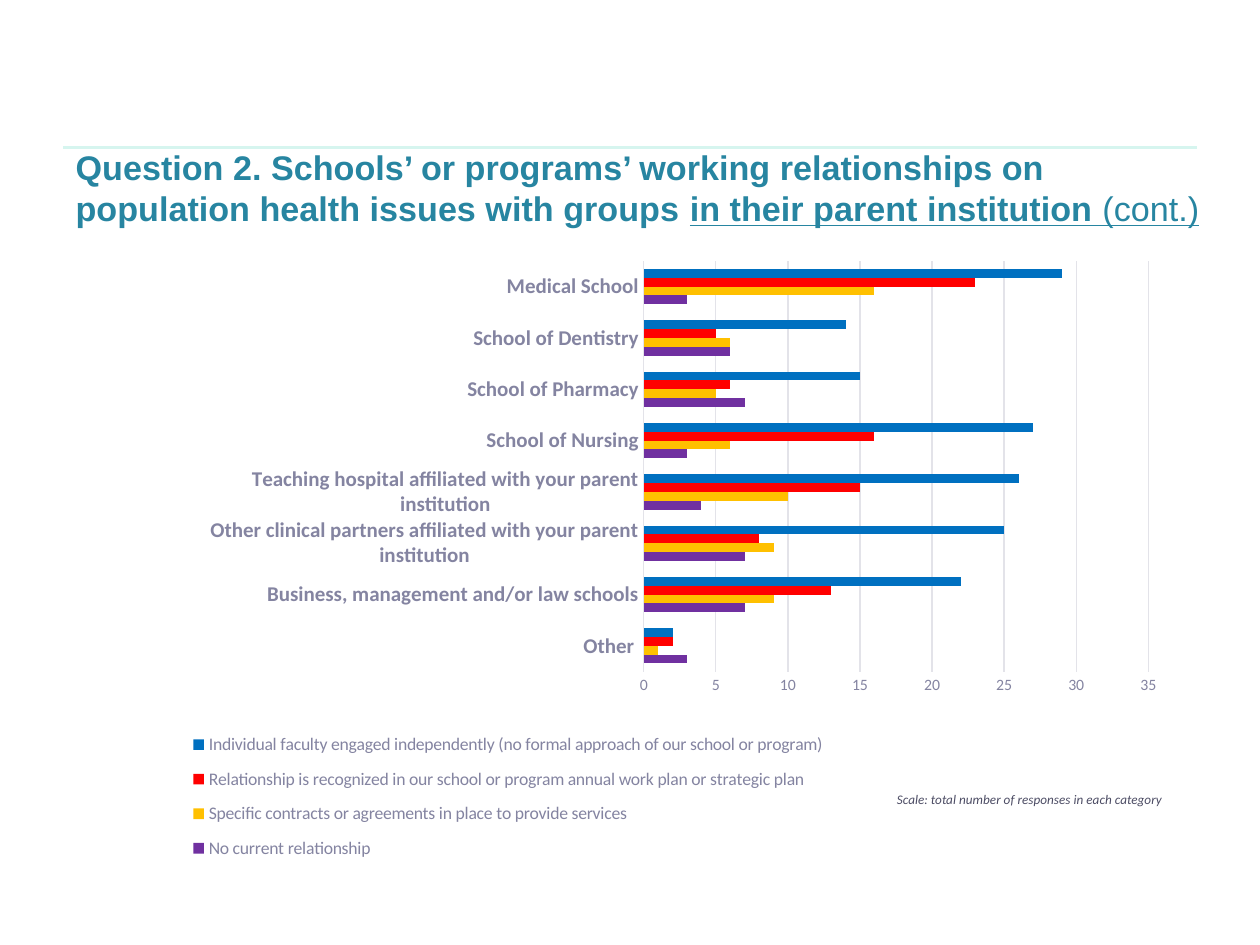
from typing import NamedTuple

from lxml.etree import SubElement
from pptx import Presentation
from pptx.chart.data import CategoryChartData
from pptx.dml.color import RGBColor
from pptx.enum.chart import XL_CHART_TYPE, XL_LEGEND_POSITION, XL_TICK_MARK
from pptx.enum.shapes import MSO_CONNECTOR
from pptx.enum.text import MSO_ANCHOR, MSO_AUTO_SIZE, PP_ALIGN
from pptx.oxml.ns import qn
from pptx.util import Inches, Pt

TEAL, MINT, DARK, MUTED, PALE = "2785A1", "D6F5EF", "4C4C64", "8484A1", "E3E3E9"


class Answer(NamedTuple):
    name: str
    values: tuple
    color: str


CATEGORIES = (
    "Other ",
    "Business, management and/or law schools",
    "Other clinical partners affiliated with your parent institution",
    "Teaching hospital affiliated with your parent institution",
    "School of Nursing",
    "School of Pharmacy",
    "School of Dentistry",
    "Medical School",
)
ANSWERS = (
    Answer("No current relationship", (3, 7, 7, 4, 3, 7, 6, 3), "7030A0"),
    Answer("Specific contracts or agreements in place to provide services",
           (1, 9, 9, 10, 6, 5, 6, 16), "FFC000"),
    Answer("Relationship is recognized in our school or program annual work plan or strategic plan",
           (2, 13, 8, 15, 16, 6, 5, 23), "FF0000"),
    Answer("Individual faculty engaged independently (no formal approach of our school or program)",
           (2, 22, 25, 26, 27, 15, 14, 29), "0070C0"),
)


def rgb(color: str) -> RGBColor:
    return RGBColor.from_string(color)


def format_font(font, size: float, color: str, name: str = "Calibri", bold: bool = False,
                italic: bool = False, underline: bool = False) -> None:
    font.name, font.size = name, Pt(size)
    font.bold, font.italic, font.underline = bold, italic, underline
    font.color.rgb = rgb(color)


def add_span(para, text: str, **style) -> None:
    span = para.add_run()
    span.text = text
    format_font(span.font, **style)


def format_line(line, color: str, width: float) -> None:
    line.color.rgb = rgb(color)
    line.width = Pt(width)


def set_layout(element, inner: bool, **fractions: float) -> None:
    """Place a plot area or legend by fractions of the chart's size."""
    layout = element.get_or_add_layout() if hasattr(element, "get_or_add_layout") else None
    if layout is None:
        layout = element.find(qn("c:layout"))
    if layout is None:
        layout = SubElement(element, qn("c:layout"))
        element.remove(layout)
        element.insert(0, layout)
    for child in list(layout):
        layout.remove(child)
    manual = SubElement(layout, qn("c:manualLayout"))
    if inner:
        SubElement(manual, qn("c:layoutTarget")).set("val", "inner")
    for side in ("x", "y"):
        SubElement(manual, qn(f"c:{side}Mode")).set("val", "edge")
    for side in ("x", "y", "w", "h"):
        SubElement(manual, qn(f"c:{side}")).set("val", str(fractions[side]))


def add_rule(page) -> None:
    rule = page.shapes.add_connector(
        MSO_CONNECTOR.STRAIGHT, Inches(0.5), Inches(1.17), Inches(9.5), Inches(1.17))
    format_line(rule.line, MINT, 1.5)
    SubElement(rule._element.spPr, qn("a:effectLst"))


def fill_title(page) -> None:
    title = page.shapes.title
    title.left, title.top = Inches(0.5), Inches(1.25)
    title.width, title.height = Inches(9.25), Inches(0.48)
    frame = title.text_frame
    frame.word_wrap = True
    frame.auto_size = MSO_AUTO_SIZE.NONE
    frame.vertical_anchor = MSO_ANCHOR.MIDDLE
    para = frame.paragraphs[0]
    para.alignment = PP_ALIGN.LEFT
    style = dict(size=19.5, color=TEAL, name="Arial")
    add_span(para, "Question 2. Schools’ or programs’ working relationships on "
                   "population health issues with groups ", bold=True, **style)
    add_span(para, "in their parent institution", bold=True, underline=True, **style)
    add_span(para, " (cont.)", underline=True, **style)


def add_answer_chart(page) -> None:
    data = CategoryChartData()
    data.categories = CATEGORIES
    for answer in ANSWERS:
        data.add_series(answer.name, answer.values)
    chart = page.shapes.add_chart(
        XL_CHART_TYPE.BAR_CLUSTERED, Inches(1.46), Inches(1.92),
        Inches(8.04), Inches(5.06), data).chart
    format_font(chart.font, 10, DARK)
    chart.has_title = False

    plot = chart.plots[0]
    plot.gap_width, plot.overlap = 182, 0
    plot.vary_by_categories = False
    for series, answer in zip(plot.series, ANSWERS):
        series.format.fill.solid()
        series.format.fill.fore_color.rgb = rgb(answer.color)

    groups, counts = chart.category_axis, chart.value_axis
    for axis in (groups, counts):
        axis.major_tick_mark = axis.minor_tick_mark = XL_TICK_MARK.NONE
    format_font(groups.tick_labels.font, 12, MUTED, bold=True)
    format_line(groups.format.line, PALE, 0.75)
    format_font(counts.tick_labels.font, 9, MUTED)
    counts.format.line.fill.background()
    counts.minimum_scale, counts.maximum_scale, counts.major_unit = 0, 35, 5
    format_line(counts.major_gridlines.format.line, PALE, 0.75)

    chart.has_legend = True
    legend = chart.legend
    legend.position = XL_LEGEND_POSITION.BOTTOM
    legend.include_in_layout = False
    format_font(legend.font, 10.1, MUTED)
    plot_area = chart._chartSpace.chart.plotArea
    set_layout(plot_area, True, x=0.454, y=0.03, w=0.498, h=0.644)
    # A fixed legend box stacks the entries in one column
    legend_element = legend._element
    if legend_element.find(qn("c:layout")) is None:
        position = legend_element.find(qn("c:legendPos"))
        position.addnext(legend_element.makeelement(qn("c:layout")))
    set_layout(legend_element, False, x=0, y=0.75, w=0.64, h=0.24)


def add_scale_note(page) -> None:
    box = page.shapes.add_textbox(Inches(7.02), Inches(6.23), Inches(2.33), Inches(0.23))
    box.text_frame.word_wrap = False
    box.text_frame.auto_size = MSO_AUTO_SIZE.SHAPE_TO_FIT_TEXT
    add_span(box.text_frame.paragraphs[0], "Scale: total number of responses in each category",
             size=7.5, color=DARK, italic=True)


def main() -> None:
    deck = Presentation()
    deck.slide_width, deck.slide_height = Inches(10), Inches(7.5)
    page = deck.slides.add_slide(deck.slide_layouts[5])
    add_rule(page)
    fill_title(page)
    add_answer_chart(page)
    add_scale_note(page)
    deck.save("out.pptx")


if __name__ == "__main__":
    main()
